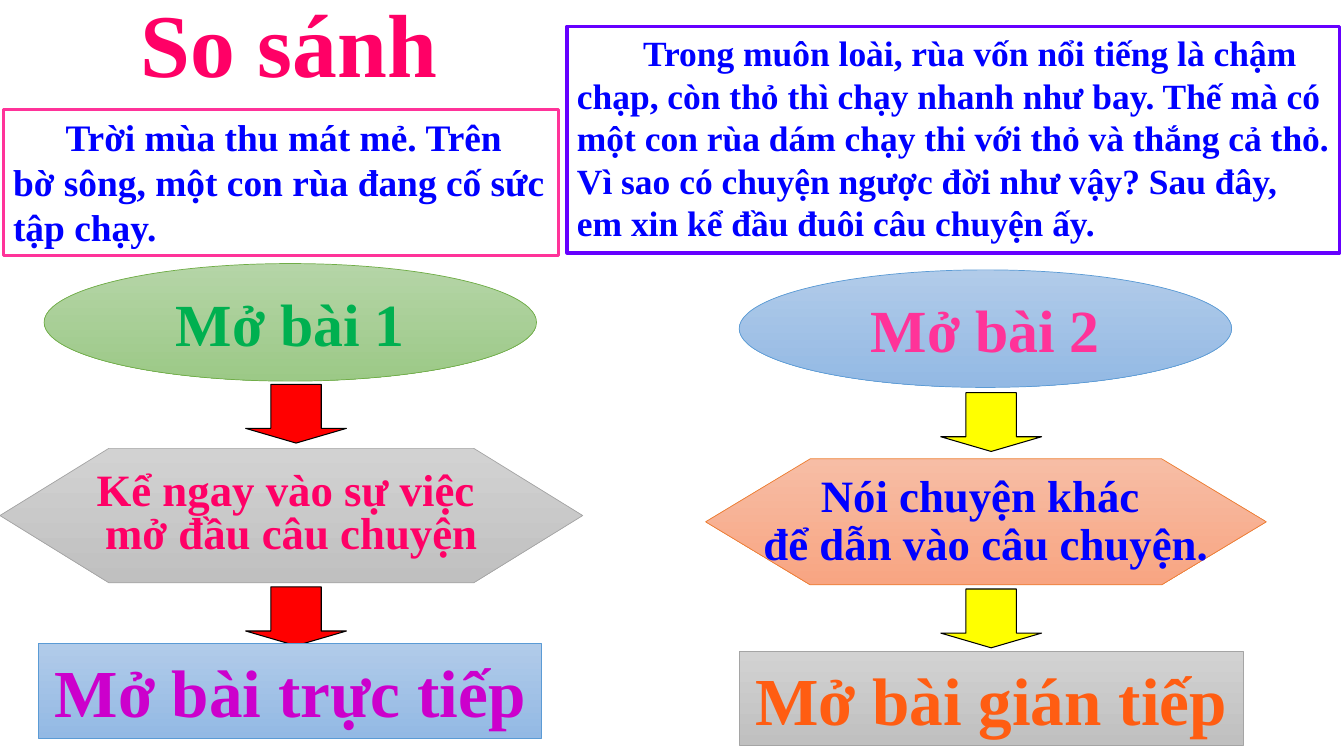
"""Build the slide that compares two ways of opening a story."""
from dataclasses import dataclass

import pptx
import pptx.dml.color
import pptx.enum.shapes
import pptx.enum.text
import pptx.util

RGB = pptx.dml.color.RGBColor
SHAPE = pptx.enum.shapes.MSO_SHAPE
ALIGN = pptx.enum.text.PP_ALIGN
ANCHOR = pptx.enum.text.MSO_ANCHOR
AUTO = pptx.enum.text.MSO_AUTO_SIZE

PX = 9525
FONT = "Times New Roman"

WHITE = RGB(0xFF, 0xFF, 0xFF)
BLACK = RGB(0x00, 0x00, 0x00)
RED = RGB(0xFF, 0x00, 0x00)
YELLOW = RGB(0xFF, 0xFF, 0x00)
BLUE = RGB(0x00, 0x00, 0xFF)
CRIMSON = RGB(0xFF, 0x00, 0x66)
PINK = RGB(0xFF, 0x33, 0x99)
VIOLET = RGB(0x66, 0x00, 0xFF)
MAGENTA = RGB(0xCC, 0x00, 0xCC)
FLAME = RGB(0xFF, 0x5D, 0x12)
LEAF = RGB(0x00, 0xB0, 0x50)
GREEN_EDGE = RGB(0x70, 0xAD, 0x47)
SKY_EDGE = RGB(0x5B, 0x9B, 0xD5)
GRAY_EDGE = RGB(0xA5, 0xA5, 0xA5)
ORANGE_EDGE = RGB(0xED, 0x7D, 0x31)

GREEN = (RGB(0xB5, 0xD5, 0xA7), RGB(0x9C, 0xC9, 0x87))
SKY = (RGB(0xB1, 0xCB, 0xE9), RGB(0x93, 0xB9, 0xE4))
GRAY = (RGB(0xD2, 0xD2, 0xD2), RGB(0xC0, 0xC0, 0xC0))
ORANGE = (RGB(0xF7, 0xBD, 0xA5), RGB(0xF8, 0xA5, 0x82))


@dataclass(frozen=True)
class Box:
    """A filled shape, its place in px and its text."""

    kind: SHAPE
    at: tuple[int, int, int, int]
    fill: tuple[RGB, ...]
    edge: RGB
    weight: float = 0.5
    text: str = ""
    color: RGB = BLACK
    size: float = 32
    spacing: float = 1.0
    adjust: tuple[float, ...] = ()
    indent: int = 0
    passage: bool = False


def arrow(left: int, top: int, color: RGB) -> Box:
    """Describe one downward arrow."""
    return Box(SHAPE.DOWN_ARROW, (left, top, 96, 56), (color,), BLACK, 0.75,
               adjust=(0.5, 0.25))


BOXES = [
    Box(SHAPE.OVAL, (42, 251, 469, 112), GREEN, GREEN_EDGE,
        text="Mở bài 1", color=LEAF, size=42.7),
    Box(SHAPE.OVAL, (704, 257, 469, 112), SKY, SKY_EDGE,
        text="Mở bài 2", color=PINK, size=42.7),
    Box(SHAPE.HEXAGON, (0, 427, 555, 128), GRAY, GRAY_EDGE,
        text="Kể ngay vào sự việc \nmở đầu câu chuyện", color=CRIMSON,
        spacing=0.8, adjust=(0.81,)),
    Box(SHAPE.HEXAGON, (672, 437, 534, 120), ORANGE, ORANGE_EDGE,
        text="Nói chuyện khác \nđể dẫn vào câu chuyện.", color=BLUE,
        spacing=0.9, adjust=(0.83,)),
    arrow(234, 366, RED),
    arrow(234, 559, RED),
    arrow(896, 374, YELLOW),
    arrow(896, 561, YELLOW),
    Box(SHAPE.RECTANGLE, (3, 104, 529, 139), (WHITE,), PINK, 2.25,
        text="Trời mùa thu mát mẻ. Trên bờ sông, một con rùa đang cố sức "
             "tập chạy.",
        color=BLUE, size=26.7, indent=50, passage=True),
    Box(SHAPE.RECTANGLE, (540, 25, 736, 216), (WHITE,), VIOLET, 2.25,
        text="Trong muôn loài, rùa vốn nổi tiếng là chậm chạp, còn thỏ thì "
             "chạy nhanh như bay. Thế mà có một con rùa dám chạy thi với thỏ "
             "và thắng cả thỏ. Vì sao có chuyện ngược đời như vậy? Sau đây, "
             "em xin kể đầu đuôi câu chuyện ấy.",
        color=BLUE, size=25.3, indent=63, passage=True),
    Box(SHAPE.RECTANGLE, (704, 620, 480, 90), GRAY, GRAY_EDGE,
        text="Mở bài gián tiếp", color=FLAME, size=48),
    Box(SHAPE.RECTANGLE, (37, 613, 479, 90), SKY, SKY_EDGE,
        text="Mở bài trực tiếp", color=MAGENTA, size=48),
]


def apply(obj: object, values: dict[str, object]) -> None:
    """Set each named attribute on an object."""
    for name, value in values.items():
        setattr(obj, name, value)


def write(tf: pptx.text.text.TextFrame, text: str, size: float, color: RGB,
          align: ALIGN, spacing: float, indent: int = 0) -> None:
    """Fill a text frame and format its paragraphs."""
    tf.text = text
    for p in tf.paragraphs:
        apply(p, {"alignment": align, "line_spacing": spacing})
        if indent:
            p._p.get_or_add_pPr().set("indent", str(indent * PX))
        for r in p.runs:
            apply(r.font, {"name": FONT, "size": pptx.util.Pt(size), "bold": True})
            r.font.color.rgb = color


def draw(shapes: pptx.shapes.shapetree.SlideShapes, box: Box) -> None:
    """Draw one box with its fill, outline and text."""
    sp = shapes.add_shape(box.kind, *(v * PX for v in box.at))
    sp.shadow.inherit = False
    for i, value in enumerate(box.adjust):
        sp.adjustments[i] = value
    if len(box.fill) == 1:
        sp.fill.solid()
        sp.fill.fore_color.rgb = box.fill[0]
    else:
        sp.fill.gradient()
        sp.fill.gradient_angle = 270
        for stop, color in zip(sp.fill.gradient_stops, box.fill):
            stop.color.rgb = color
    sp.line.color.rgb = box.edge
    sp.line.width = pptx.util.Pt(box.weight)
    if box.text:
        anchor = ANCHOR.TOP if box.passage else ANCHOR.MIDDLE
        align = ALIGN.LEFT if box.passage else ALIGN.CENTER
        apply(sp.text_frame, {"word_wrap": box.passage, "vertical_anchor": anchor})
        write(sp.text_frame, box.text, box.size, box.color, align,
              box.spacing, box.indent)


def main() -> None:
    """Create and save the presentation."""
    prs = pptx.Presentation()
    apply(prs, {"slide_width": 1280 * PX, "slide_height": 720 * PX})
    s = prs.slides.add_slide(prs.slide_layouts[5])
    title = s.shapes.title
    apply(title, {"left": 49 * PX, "top": -14 * PX,
                  "width": 452 * PX, "height": 120 * PX})
    apply(title.text_frame, {"auto_size": AUTO.NONE, "word_wrap": True,
                             "vertical_anchor": ANCHOR.MIDDLE})
    write(title.text_frame, "So sánh", 64, CRIMSON, ALIGN.CENTER, 0.9)
    for box in BOXES:
        draw(s.shapes, box)
    prs.save("out.pptx")


if __name__ == "__main__":
    main()
